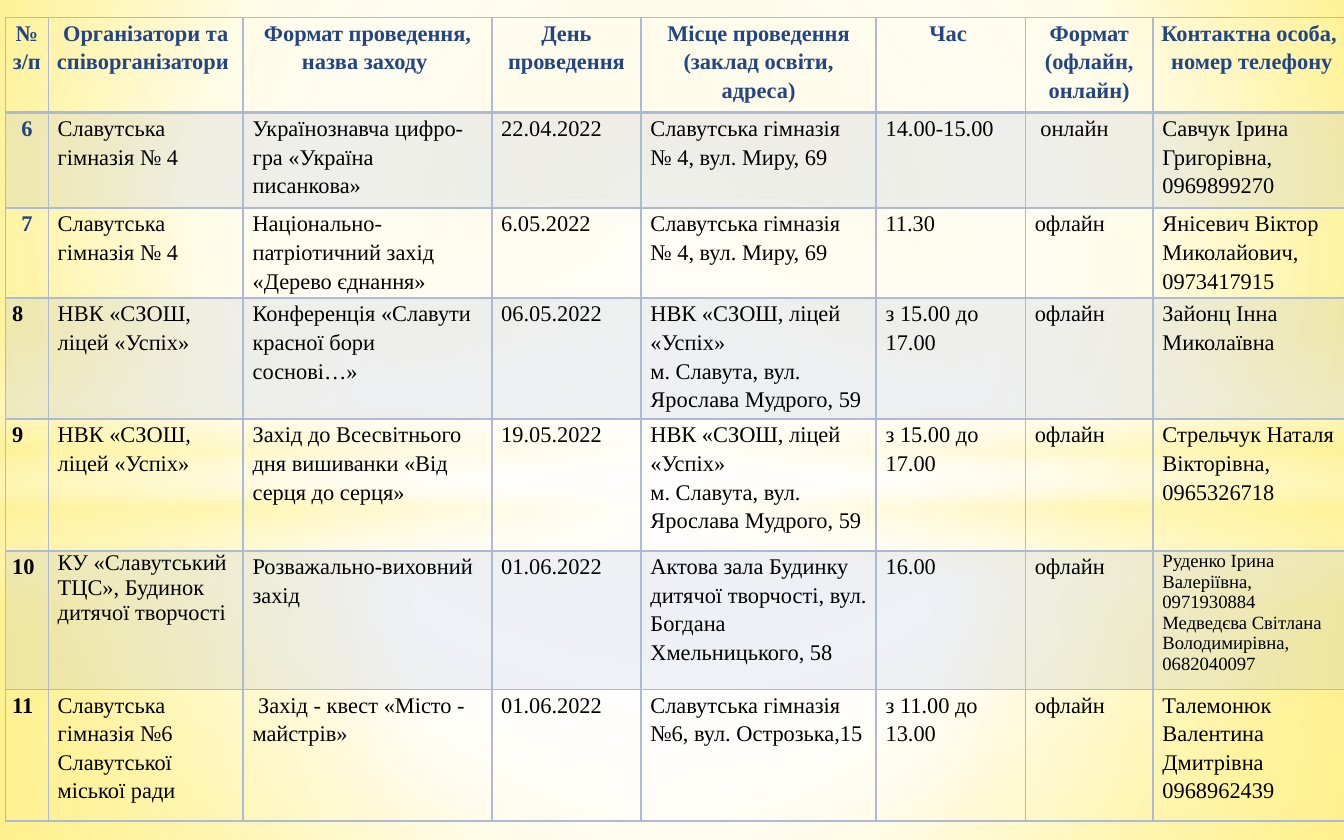
import lxml.etree
import pptx
import pptx.dml.color
import pptx.enum.shapes
import pptx.enum.text
import pptx.oxml
import pptx.oxml.ns
import pptx.util

Inches = pptx.util.Inches
Pt = pptx.util.Pt
qn = pptx.oxml.ns.qn
SHAPES = pptx.enum.shapes.MSO_SHAPE
CENTER = pptx.enum.text.PP_ALIGN.CENTER

FONT = "Times New Roman"
BLUE, BLACK, RULE = "244583", "000000", "AEBAD5"
COLUMN_WIDTHS = [0.32, 1.45, 1.85, 1.11, 1.75, 1.11, 0.95, 1.43]
ROW_HEIGHTS = [0.71, 0.71, 0.67, 0.9, 0.98, 1.03, 0.98]

SCHOOL_4 = "Славутська гімназія № 4"
SCHOOL_4_PLACE = "Славутська гімназія № 4, вул. Миру, 69"
LYCEUM = "НВК «СЗОШ, ліцей «Успіх»"
LYCEUM_PLACE = LYCEUM + "\nм. Славута, вул. Ярослава Мудрого, 59"

# A line break inside a cell starts a new paragraph
HEADER = [
    "№\nз/п", "Організатори та співорганізатори ", "Формат проведення, назва заходу ",
    "День проведення", "Місце проведення\n(заклад освіти, адреса)", "Час ",
    "Формат\n(офлайн, онлайн)", "Контактна особа,\n номер телефону",
]
EVENTS = [
    ["6", SCHOOL_4, "Українознавча цифро-гра «Україна писанкова»", "22.04.2022",
     SCHOOL_4_PLACE, "14.00-15.00", " онлайн", "Савчук Ірина Григорівна,\n0969899270"],
    ["7", SCHOOL_4, "Національно-патріотичний захід «Дерево єднання»", "6.05.2022",
     SCHOOL_4_PLACE, "11.30", "офлайн", "Янісевич Віктор Миколайович,\n0973417915"],
    ["8", LYCEUM, "Конференція «Славути красної бори соснові…»", "06.05.2022",
     LYCEUM_PLACE, "з 15.00 до 17.00", "офлайн", "Зайонц Інна Миколаївна"],
    ["9", LYCEUM, "Захід до Всесвітнього дня вишиванки «Від серця до серця»", "19.05.2022",
     LYCEUM_PLACE, "з 15.00 до 17.00", "офлайн", "Стрельчук Наталя Вікторівна, 0965326718"],
    ["10", "КУ «Славутський ТЦС», Будинок дитячої творчості", "Розважально-виховний захід",
     "01.06.2022", "Актова зала Будинку дитячої творчості, вул. Богдана Хмельницького, 58",
     "16.00", "офлайн",
     "Руденко Ірина Валеріївна, 0971930884 Медведєва Світлана Володимирівна, 0682040097"],
    ["11", "Славутська гімназія №6 Славутської міської ради",
     " Захід - квест «Місто - майстрів»", "01.06.2022",
     "Славутська гімназія №6, вул. Острозька,15", "з 11.00 до 13.00", "офлайн",
     "Талемонюк Валентина Дмитрівна\n0968962439"],
]


def color(value):
    return pptx.dml.color.RGBColor.from_string(value)


def add_child(parent, tag, **attributes):
    child = lxml.etree.SubElement(parent, qn(tag))
    for name, value in attributes.items():
        child.set(name, str(value))
    return child


def set_gradient(holder, stops, focus=None):
    """Swap the empty fill of holder for a gradient: circular with a focus, else vertical."""
    gradient = pptx.oxml.parse_xml(
        '<a:gradFill %s rotWithShape="1"/>' % pptx.oxml.ns.nsdecls("a"))
    stop_list = add_child(gradient, "a:gsLst")
    for position, value, opacity in stops:
        stop = add_child(stop_list, "a:gs", pos=position * 1000)
        paint = add_child(stop, "a:srgbClr", val=value)
        if opacity < 100:
            add_child(paint, "a:alpha", val=opacity * 1000)
    if focus:
        circle = add_child(gradient, "a:path", path="circle")
        sides = dict(zip("ltrb", (side * 1000 for side in focus)))
        add_child(circle, "a:fillToRect", **sides)
    else:
        add_child(gradient, "a:lin", ang=90 * 60000, scaled=0)
    holder.replace(holder.find(qn("a:noFill")), gradient)


def add_glow(page, kind, box, stops, focus=None):
    glow = page.shapes.add_shape(kind, *[Inches(length) for length in box])
    glow.shadow.inherit = False
    glow.line.fill.background()
    glow.fill.background()
    set_gradient(glow.element.spPr, stops, focus)


def build_backdrop(page, box):
    left, top, width, height = box
    page.background.fill.background()
    holder = next(page.element.iter(qn("p:bgPr")))
    set_gradient(holder, [(0, "FFF18D", 100), (60, "FFFFFF", 100), (100, "FFE94E", 100)],
                 (20, 10, 20, 60))

    # Lower and upper halves
    split, middle = 3.52, (50, 50, 50, 50)
    add_glow(page, SHAPES.RECTANGLE, (left, top + split, width, height - split),
             [(0, "FFFFFF", 91), (37, "FFFFFF", 76), (100, "FFF39D", 79)], middle)
    add_glow(page, SHAPES.RECTANGLE, (left, top, width, split),
             [(0, "FFFFFF", 89), (48, "FFFFFF", 62), (100, "FFF39D", 79)], middle)
    # Horizon band and central light
    add_glow(page, SHAPES.RECTANGLE, (left, top + 2.42, width, 2.08),
             [(0, "FFFFFF", 0), (29, "FFFFFF", 30), (45, "FFF39D", 40),
              (55, "FFFFFF", 26), (65, "FFF39D", 60), (100, "FFFFFF", 0)])
    add_glow(page, SHAPES.OVAL, (left, top + 1.46, width, 4.65),
             [(0, "FFFFFF", 100), (54, "FFFFFF", 0)], middle)


def set_borders(cell, top, bottom):
    properties = cell._tc.get_or_add_tcPr()
    widths = {"a:lnL": 1, "a:lnR": 1, "a:lnT": top, "a:lnB": bottom}
    for index, (tag, width) in enumerate(widths.items()):
        line = add_child(properties, tag, w=Pt(width))
        add_child(add_child(line, "a:solidFill"), "a:srgbClr", val=RULE)
        properties.insert(index, line)


def fill_cell(cell, text, row, column):
    numbered = column == 0
    blue = row == 0 or numbered and row <= 2
    compact = row == 5 and column in (1, 7)
    cell.margin_left = cell.margin_right = Inches(0.05 if row == 0 or numbered else 0.07)
    cell.margin_top = cell.margin_bottom = 0

    lines = text.split("\n")
    for index, words in enumerate(lines):
        frame = cell.text_frame
        para = frame.add_paragraph() if index else frame.paragraphs[0]
        if blue:
            para.alignment = CENTER
        if not compact:
            para.line_spacing = 1.15
        if row >= 5 and not numbered and len(lines) == 1:
            para.space_after = Pt(10)
        span = para.add_run()
        span.text = words
        span.font.name = FONT
        span.font.size = Pt(10 if compact and column == 7 else 12)
        span.font.bold = row == 0 or numbered
        span.font.color.rgb = color(BLUE if blue else BLACK)

    # Odd rows carry a translucent band
    if row % 2:
        cell.fill.solid()
        cell.fill.fore_color.rgb = color(RULE)
        paint = next(cell._tc.tcPr.iter(qn("a:srgbClr")))
        add_child(paint, "a:alpha", val=20000)
    else:
        cell.fill.background()
    set_borders(cell, top=2 if row == 1 else 1, bottom=2 if row == 0 else 1)


def build_schedule(page, box):
    rows = [HEADER] + EVENTS
    frame = page.shapes.add_table(len(rows), len(HEADER), *[Inches(length) for length in box])
    table = frame.table
    table.first_row = table.horz_banding = False
    for column, width in zip(table.columns, COLUMN_WIDTHS):
        column.width = Inches(width)
    for row, height in zip(table.rows, ROW_HEIGHTS):
        row.height = Inches(height)
    for row, texts in enumerate(rows):
        for column, text in enumerate(texts):
            fill_cell(table.cell(row, column), text, row, column)


def main():
    deck = pptx.Presentation()
    deck.slide_width, deck.slide_height = Inches(10), Inches(6.25)
    page = deck.slides.add_slide(deck.slide_layouts[6])
    build_backdrop(page, (0, 0, 10, 6.25))
    build_schedule(page, (0.04, 0.13, sum(COLUMN_WIDTHS), sum(ROW_HEIGHTS)))
    deck.save("out.pptx")


if __name__ == "__main__":
    main()
